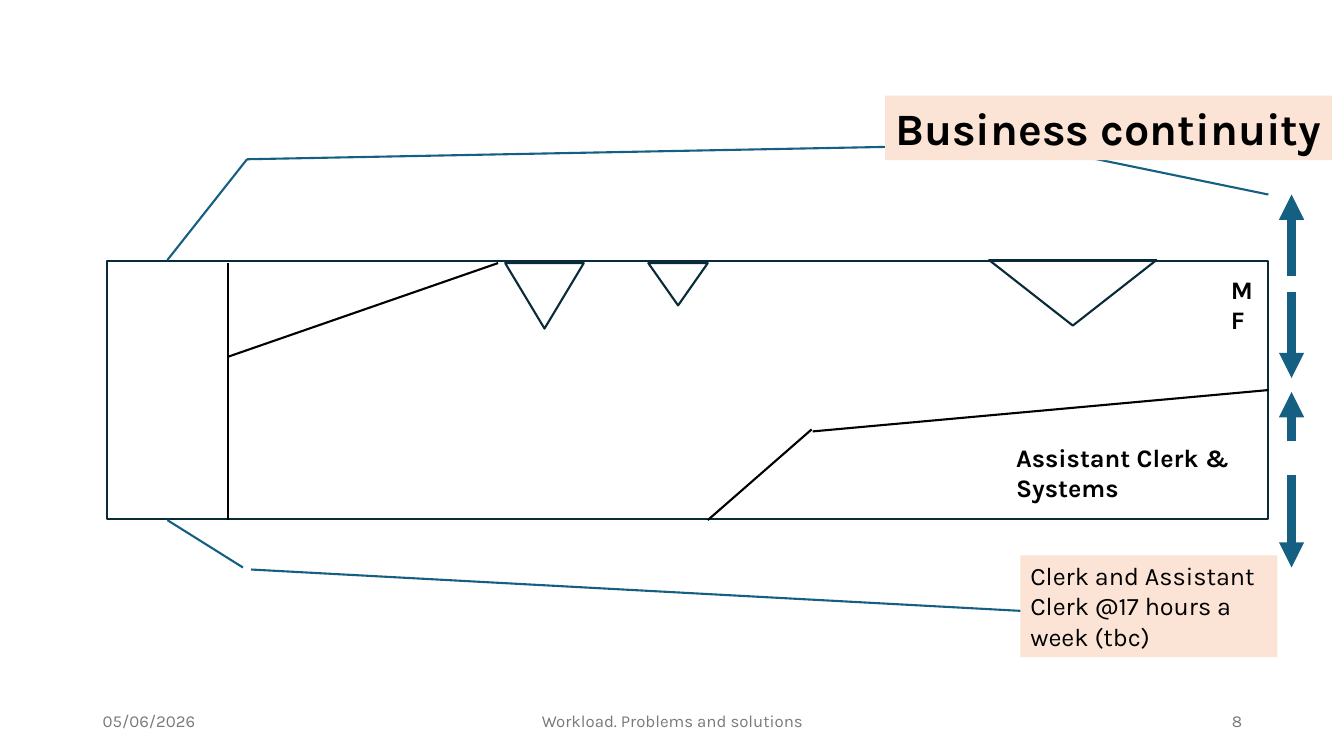
from lxml import etree
from pptx import Presentation
from pptx.dml.color import RGBColor
from pptx.enum.shapes import MSO_CONNECTOR, MSO_SHAPE
from pptx.enum.text import MSO_ANCHOR, MSO_AUTO_SIZE, PP_ALIGN
from pptx.oxml.ns import qn
from pptx.util import Emu, Pt

RECTANGLE = MSO_SHAPE.RECTANGLE
TRIANGLE = MSO_SHAPE.ISOSCELES_TRIANGLE
STRAIGHT = MSO_CONNECTOR.STRAIGHT
TOP, MIDDLE = MSO_ANCHOR.TOP, MSO_ANCHOR.MIDDLE
LEFT, CENTER, RIGHT = PP_ALIGN.LEFT, PP_ALIGN.CENTER, PP_ALIGN.RIGHT
GROW, FIXED = MSO_AUTO_SIZE.SHAPE_TO_FIT_TEXT, MSO_AUTO_SIZE.NONE

EMU_PER_PX = 9144  # 100 px to the inch
FONT = "Karla"
COLORS = {
    "outline": "092A39",
    "black": "000000",
    "teal": "156082",
    "peach": "FBE3D6",
    "gray": "797979",
}


def px(*lengths):
    return [Emu(length * EMU_PER_PX) for length in lengths]


def color(name):
    return RGBColor.from_string(COLORS[name])


class WorkloadSlide:
    def __init__(self, presentation):
        self.shapes = presentation.slides.add_slide(presentation.slide_layouts[6]).shapes

    def outline(self, kind, box, rotation=0):
        shape = self.shapes.add_shape(kind, *px(*box))
        shape.shadow.inherit = False
        shape.rotation = rotation
        shape.fill.background()
        shape.line.color.rgb = color("outline")
        shape.line.width = Pt(1.5)

    def line(self, start, end, ink="black", width=1.5, arrow=False):
        connector = self.shapes.add_connector(STRAIGHT, *px(*start, *end))
        connector.line.color.rgb = color(ink)
        connector.line.width = Pt(width)
        if arrow:
            etree.SubElement(connector.line._get_or_add_ln(), qn("a:tailEnd"), type="triangle")
        etree.SubElement(connector._element.spPr, qn("a:effectLst"))

    def text(self, words, box, *, size=18, ink="black", bold=False, fill=None,
             align=LEFT, anchor=TOP, fit=GROW):
        label = self.shapes.add_textbox(*px(*box))
        if fill:
            label.fill.solid()
            label.fill.fore_color.rgb = color(fill)
        frame = label.text_frame
        frame.word_wrap = True
        frame.auto_size = fit
        frame.vertical_anchor = anchor
        paragraph = frame.paragraphs[0]
        paragraph.alignment = align
        run = paragraph.add_run()
        run.text = words
        run.font.name = FONT
        run.font.size = Pt(size)
        run.font.bold = bold
        run.font.color.rgb = color(ink)

    def footer(self, words, left, width, align):
        self.text(words, (left, 695, width, 40), size=12, ink="gray",
                  align=align, anchor=MIDDLE, fit=FIXED)


def main():
    presentation = Presentation()
    presentation.slide_width, presentation.slide_height = px(1333, 750)
    slide = WorkloadSlide(presentation)

    # Workload band with its dips
    slide.outline(RECTANGLE, (106, 259, 1152, 256))
    for dip in [(501, 261, 78, 65), (643, 261, 59, 42), (981, 258, 166, 65)]:
        slide.outline(TRIANGLE, dip, rotation=180)

    # Divisions of the band
    for start, end in [
        ((226, 261), (226, 516)),
        ((226, 354), (494, 261)),
        ((702, 516), (805, 426)),
        ((806, 428), (1258, 387)),
    ]:
        slide.line(start, end)

    # Business continuity limits above and below the band
    for start, end in [
        ((166, 258), (245, 158)),
        ((245, 158), (1020, 143)),
        ((1020, 144), (1258, 193)),
        ((166, 516), (241, 563)),
        ((249, 565), (1030, 607)),
    ]:
        slide.line(start, end, ink="teal")

    for tail, tip in [(274, 193), (290, 375), (438, 389), (471, 563)]:
        slide.line((1281, tail), (1281, tip), ink="teal", width=6, arrow=True)

    slide.text("MF", (1211, 267, 54, 40), bold=True)
    slide.text("Assistant Clerk & Systems", (998, 434, 321, 40), bold=True)
    slide.text("Business continuity", (878, 95, 443, 64), size=32, bold=True, fill="peach")
    slide.text("Clerk and Assistant Clerk @17 hours a week (tbc)",
               (1012, 551, 255, 101), fill="peach")

    slide.footer("05/06/2026", 92, 300, LEFT)
    slide.footer("Workload. Problems and solutions", 442, 450, CENTER)
    slide.footer("8", 942, 300, RIGHT)

    presentation.save("out.pptx")


if __name__ == "__main__":
    main()
